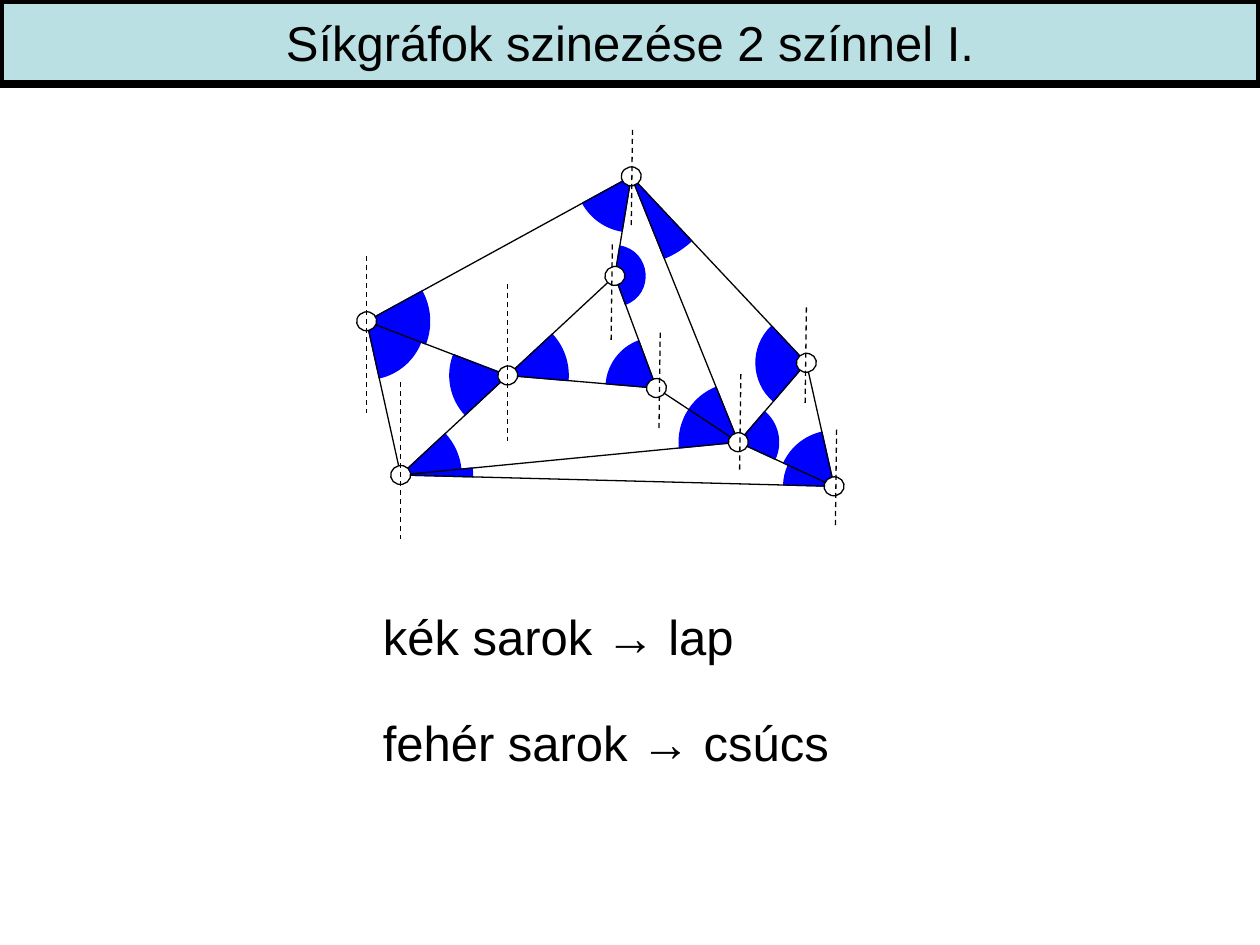
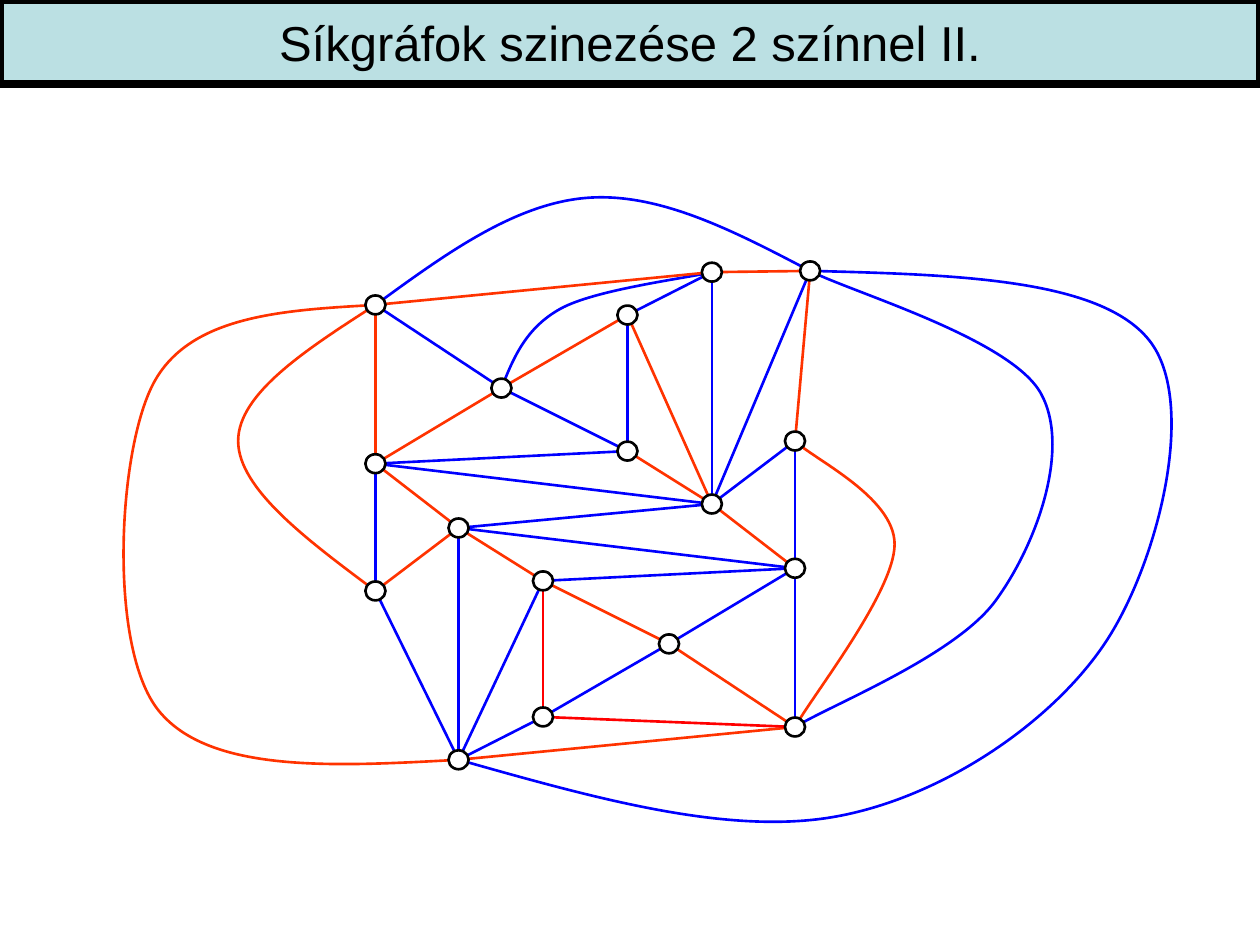
from dataclasses import dataclass
from itertools import pairwise
from math import atan2, cos, pi, sin, tan
from typing import NamedTuple

from lxml.etree import SubElement
from pptx import Presentation
from pptx.dml.color import RGBColor
from pptx.enum.dml import MSO_LINE
from pptx.enum.shapes import MSO_CONNECTOR, MSO_SHAPE
from pptx.enum.text import MSO_ANCHOR, MSO_AUTO_SIZE, PP_ALIGN
from pptx.oxml.ns import qn
from pptx.util import Inches, Pt

BLACK, WHITE, BAND = "000000", "FFFFFF", "BBE0E3"
BLUE, ORANGE, RED = "0000FF", "FF3300", "FF0000"
FONT, TEXT_SIZE = "Arial", 28
THIN, THICK = 0.75, 1.5
VERTEX_WIDTH, VERTEX_HEIGHT = 0.16, 0.15
LONG_SWEEP, SHORT_SWEEP = 1.25, 0.77


class Point(NamedTuple):
    x: float
    y: float

    def shifted(self, dx: float, dy: float) -> "Point":
        return Point(self.x + dx, self.y + dy)


class Corner(NamedTuple):
    vertices: str
    radius: float


@dataclass
class Curve:
    ends: str
    knots: list[Point]
    color: str
    relaxed_start: bool = True
    relaxed_end: bool = True


CORNER_VERTICES = {
    "A": Point(2.91, 2.55), "B": Point(3.18, 3.77), "C": Point(4.03, 2.98),
    "D": Point(4.88, 2.19), "E": Point(5.21, 3.08), "F": Point(5.01, 1.4),
    "G": Point(5.86, 3.51), "H": Point(6.4, 2.88), "I": Point(6.62, 3.86),
}
CORNER_EDGES = "FH BI AB AC BC CD CE DE DF EG FG AF BG GH GI HI"
BLUE_CORNERS = [
    Corner("ABC", 0.46), Corner("FAD", 0.44), Corner("FGH", 0.7), Corner("DFE", 0.24),
    Corner("AFC", 0.5), Corner("BCG", 0.48), Corner("BGI", 0.57), Corner("CDE", 0.48),
    Corner("CAB", 0.46), Corner("GFE", 0.47), Corner("GHI", 0.32), Corner("GEB", 0.47),
    Corner("IHG", 0.44), Corner("IGB", 0.4), Corner("EDC", 0.4), Corner("HFG", 0.4),
]
SWEEP_TOPS = {
    LONG_SWEEP: [Point(3.18, 3.03), Point(2.91, 2.03), Point(4.03, 2.25)],
    SHORT_SWEEP: [Point(4.86, 1.94), Point(5.24, 2.64), Point(5.88, 2.97),
                  Point(6.64, 3.41), Point(6.4, 2.44), Point(5.02, 1.03)],
}

UPPER_HALF = {
    "A": Point(2.98, 2.42), "B": Point(3.98, 3.08), "C": Point(4.98, 2.5),
    "D": Point(4.98, 3.58), "E": Point(5.65, 2.16), "F": Point(5.65, 4),
    "G": Point(6.31, 3.5), "H": Point(2.98, 3.68),
}
LOWER_HALF = {name.lower(): Point(9.29 - x, 8.19 - y) for name, (x, y) in UPPER_HALF.items()}
COLORED_VERTICES = UPPER_HALF | LOWER_HALF | {"T": Point(6.43, 2.15)}
COLORED_EDGES = {
    BLUE: "fF TF HD ed dh ge AB BD CD CE EF HF FG Gh ah hb bc ce ef hf gH",
    ORANGE: "CF ET TG AH HB BC DF AE Fh ab bd df ae fg fH",
    RED: "ac cd",
}
OUTER_CURVES = [
    Curve("eT", [Point(6.64, 6.48), Point(8.78, 5.09), Point(9.12, 2.7)], BLUE),
    Curve("Ae", [Point(1.22, 3.04), Point(1.26, 5.64)], ORANGE),
    Curve("gA", [Point(1.89, 3.5)], ORANGE),
    Curve("Ta", [Point(8.26, 3.12), Point(7.9, 4.77)], BLUE, False, False),
    Curve("Ga", [Point(7.1, 4.32)], ORANGE, False, False),
    Curve("AT", [Point(4.66, 1.57)], BLUE),
    Curve("BE", [Point(4.45, 2.45)], BLUE, relaxed_end=False),
]


def rgb(color: str) -> RGBColor:
    return RGBColor.from_string(color)


def style(shape, fill: str | None, line: str, width: float) -> None:
    shape.shadow.inherit = False
    if fill:
        shape.fill.solid()
        shape.fill.fore_color.rgb = rgb(fill)
    else:
        shape.fill.background()
    shape.line.color.rgb = rgb(line)
    shape.line.width = Pt(width)


def write(frame, lines: list[str]) -> None:
    frame.text = "\n".join(lines)
    for paragraph in frame.paragraphs:
        for run in paragraph.runs:
            run.font.name = FONT
            run.font.size = Pt(TEXT_SIZE)
            run.font.color.rgb = rgb(BLACK)


def add_title(slide, title: str) -> None:
    band = slide.shapes.add_shape(MSO_SHAPE.RECTANGLE, 0, 0, Inches(10), Inches(0.67))
    style(band, BAND, BLACK, 4.5)
    write(band.text_frame, [title])
    band.text_frame.vertical_anchor = MSO_ANCHOR.MIDDLE
    band.text_frame.paragraphs[0].alignment = PP_ALIGN.CENTER


def add_line(shapes, start: Point, end: Point, color: str, width: float):
    ends = [Inches(value) for value in (*start, *end)]
    line = shapes.add_connector(MSO_CONNECTOR.STRAIGHT, *ends)
    line.line.color.rgb = rgb(color)
    line.line.width = Pt(width)
    SubElement(line.element.spPr, qn("a:effectLst"))
    return line


def add_bezier(slide, points: list[Point], color: str, width: float, filled: bool) -> None:
    scaled = [(Inches(x), Inches(y)) for x, y in points]
    builder = slide.shapes.build_freeform(*scaled[0])
    builder.add_line_segments(scaled[1:], close=filled)
    shape = builder.convert_to_shape()
    segments = list(shape.element.iter(qn("a:lnTo")))
    for first in range(0, len(segments) - 2, 3):
        triple = segments[first:first + 3]
        outline = triple[0].getparent()
        bezier = SubElement(outline, qn("a:cubicBezTo"))
        outline.replace(triple[0], bezier)
        for segment in triple:
            bezier.append(segment[0])
        for segment in triple[1:]:
            outline.remove(segment)
    style(shape, color if filled else None, color, width)


def add_corner(slide, corner: Corner) -> None:
    apex, first, second = (CORNER_VERTICES[name] for name in corner.vertices)
    start, end = (atan2(side.y - apex.y, side.x - apex.x) for side in (first, second))
    sweep = (end - start + pi) % (2 * pi) - pi
    handle = 4 / 3 * tan(sweep / 4)

    def on_arc(angle: float, pull: float) -> Point:
        return apex.shifted(corner.radius * (cos(angle) - pull * sin(angle)),
                            corner.radius * (sin(angle) + pull * cos(angle)))

    arc = [on_arc(start, 0), on_arc(start, handle), on_arc(end, -handle), on_arc(end, 0)]
    add_bezier(slide, [*arc, apex], BLUE, THIN, filled=True)


def midpoint(a: Point, b: Point) -> Point:
    return Point((a.x + b.x) / 2, (a.y + b.y) / 2)


def add_curve(slide, curve: Curve) -> None:
    start, end = (COLORED_VERTICES[name] for name in curve.ends)
    knots = [start, *curve.knots, end]
    neighbours = zip([start, *knots], [*knots[1:], end])
    slopes = [Point((after.x - before.x) / 6, (after.y - before.y) / 6)
              for before, after in neighbours]
    points = [start]
    for (a, slope_a), (b, slope_b) in pairwise(zip(knots, slopes)):
        points += [a.shifted(*slope_a), b.shifted(-slope_b.x, -slope_b.y), b]
    if curve.relaxed_start:
        points[1] = midpoint(start, points[2])
    if curve.relaxed_end:
        points[-2] = midpoint(points[-3], end)
    add_bezier(slide, points, curve.color, THICK, filled=False)


def add_edges(slide, vertices: dict[str, Point], edges: str, color: str, width: float) -> None:
    for start, end in edges.split():
        add_line(slide.shapes, vertices[start], vertices[end], color, width)


def add_vertices(slide, vertices: dict[str, Point], width: float, rotation: float = 0) -> None:
    for x, y in vertices.values():
        vertex = slide.shapes.add_shape(
            MSO_SHAPE.OVAL, Inches(x - VERTEX_WIDTH / 2), Inches(y - VERTEX_HEIGHT / 2),
            Inches(VERTEX_WIDTH), Inches(VERTEX_HEIGHT))
        vertex.rotation = rotation
        style(vertex, WHITE, BLACK, width)


def add_sweep_lines(slide) -> None:
    group = slide.shapes.add_group_shape()
    for length, tops in SWEEP_TOPS.items():
        lean = -0.01 if length == SHORT_SWEEP else 0
        for top in tops:
            line = add_line(group.shapes, top, top.shifted(lean, length), BLACK, THIN)
            line.line.dash_style = MSO_LINE.DASH


def add_legend(slide) -> None:
    legend = slide.shapes.add_textbox(Inches(2.94), Inches(4.39), Inches(3.89), Inches(1.8))
    frame = legend.text_frame
    write(frame, ["kék sarok → lap", "fehér sarok → csúcs"])
    frame.word_wrap = False
    frame.auto_size = MSO_AUTO_SIZE.SHAPE_TO_FIT_TEXT
    for paragraph in frame.paragraphs:
        paragraph.line_spacing = 1.8


def build_corner_slide(slide) -> None:
    for corner in BLUE_CORNERS:
        add_corner(slide, corner)
    add_edges(slide, CORNER_VERTICES, CORNER_EDGES, BLACK, THIN)
    add_vertices(slide, CORNER_VERTICES, THIN, rotation=347.5)
    add_sweep_lines(slide)
    add_legend(slide)
    add_title(slide, "Síkgráfok szinezése 2 színnel I.")


def build_coloring_slide(slide) -> None:
    for curve in OUTER_CURVES:
        add_curve(slide, curve)
    for color, edges in COLORED_EDGES.items():
        add_edges(slide, COLORED_VERTICES, edges, color, THICK)
    add_vertices(slide, COLORED_VERTICES, THICK)
    add_title(slide, "Síkgráfok szinezése 2 színnel II.")


def main() -> None:
    deck = Presentation()
    deck.slide_width, deck.slide_height = Inches(10), Inches(7.5)
    for build in (build_corner_slide, build_coloring_slide):
        build(deck.slides.add_slide(deck.slide_layouts[6]))
    deck.save("out.pptx")


if __name__ == "__main__":
    main()
